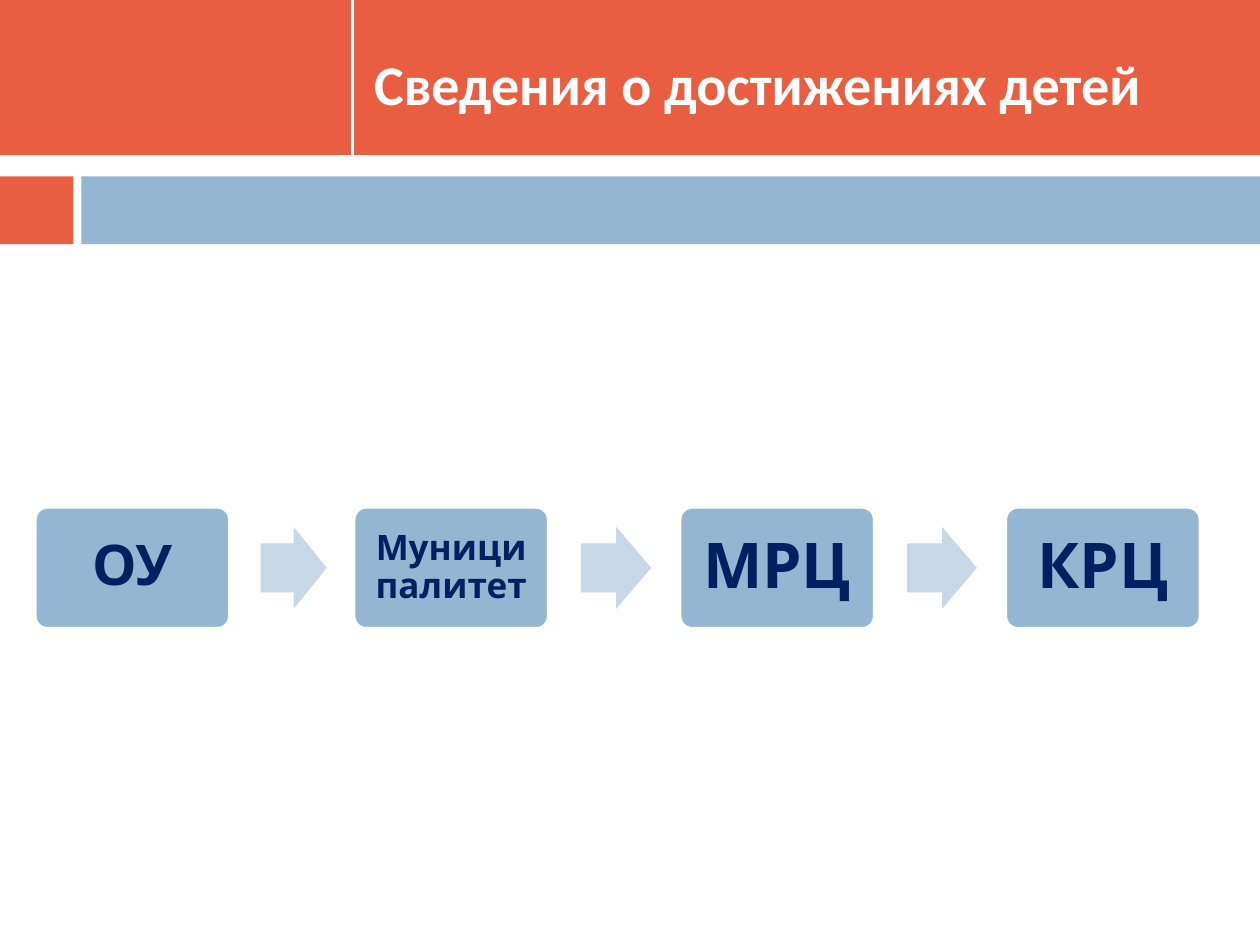
from pptx import Presentation
from pptx.dml.color import RGBColor
from pptx.enum import shapes, text
from pptx.oxml import parse_xml
from pptx.oxml.ns import nsdecls
from pptx.util import Pt

ORANGE = RGBColor(0xE9, 0x5E, 0x40)
BLUE = RGBColor(0x94, 0xB6, 0xD2)
PALE = RGBColor(0xC8, 0xD7, 0xE5)
NAVY = RGBColor(0x00, 0x20, 0x60)
WHITE = RGBColor(0xFF, 0xFF, 0xFF)

TITLE = "Сведения о достижениях детей"
BANDS = [
    (0, 0, 720, 88.6, ORANGE),
    (0, 97.2, 720, 25.2, WHITE),
    (0, 100.8, 42, 38.7, ORANGE),
    (46.5, 100.8, 673.5, 38.7, BLUE),
]
STEPS = [("ОУ", 20.2, 32), ("Муниципалитет", 202.4, 20),
         ("МРЦ", 388.7, 36), ("КРЦ", 574.8, 36)]
STEP_WIDTH, STEP_HEIGHT, ARROW_HEIGHT = 110.9, 69.1, 46.8
MIDDLE = 324.5
ARROW_OFFSET, ARROW_SHARE = 0.25, 0.53


def add_block(slide, kind, left, top, width, height, fill):
    block = slide.shapes.add_shape(kind, Pt(left), Pt(top), Pt(width), Pt(height))
    block.shadow.inherit = False
    block.fill.solid()
    block.fill.fore_color.rgb = fill
    block.line.fill.background()
    return block


def style(paragraph, font_name, size, color):
    for span in paragraph.runs:
        span.font.name = font_name
        span.font.size = Pt(size)
        span.font.bold = True
        span.font.color.rgb = color


def add_header(slide):
    for band in BANDS:
        add_block(slide, shapes.MSO_SHAPE.RECTANGLE, *band)
    divider = slide.shapes.add_connector(
        shapes.MSO_CONNECTOR.STRAIGHT, Pt(201.4), Pt(0), Pt(201.4), Pt(88.6))
    divider.line.color.rgb = WHITE
    divider.line.width = Pt(1.5)
    divider._element.spPr.append(parse_xml(f"<a:effectLst {nsdecls('a')}/>"))

    title = slide.shapes.title
    title.left, title.top, title.width, title.height = Pt(206.6), Pt(18), Pt(516.2), Pt(59)
    frame = title.text_frame
    frame.text = TITLE
    frame.vertical_anchor = text.MSO_ANCHOR.MIDDLE
    frame.paragraphs[0].alignment = text.PP_ALIGN.LEFT
    style(frame.paragraphs[0], "Calibri", 32, WHITE)
    slide.shapes._spTree.append(title._element)


def add_step(slide, label, left, size):
    box = add_block(slide, shapes.MSO_SHAPE.ROUNDED_RECTANGLE, left,
                    MIDDLE - STEP_HEIGHT / 2, STEP_WIDTH, STEP_HEIGHT, BLUE)
    box.adjustments[0] = 0.1
    box.line.color.rgb = WHITE
    box.line.width = Pt(1.5)
    frame = box.text_frame
    frame.text = label
    frame.word_wrap = True
    frame.vertical_anchor = text.MSO_ANCHOR.MIDDLE
    frame.margin_left = frame.margin_right = Pt(6)
    frame.margin_top = frame.margin_bottom = Pt(6)
    para = frame.paragraphs[0]
    para.alignment = text.PP_ALIGN.CENTER
    para.line_spacing = 0.9
    style(para, "Cabin", size, NAVY)


def add_arrow(slide, left, next_left):
    gap = next_left - left - STEP_WIDTH
    arrow = add_block(slide, shapes.MSO_SHAPE.RIGHT_ARROW,
                      left + STEP_WIDTH + gap * ARROW_OFFSET,
                      MIDDLE - ARROW_HEIGHT / 2, gap * ARROW_SHARE, ARROW_HEIGHT, PALE)
    arrow.adjustments[0] = 0.6
    arrow.adjustments[1] = 0.5


def main():
    deck = Presentation()
    deck.slide_width, deck.slide_height = Pt(720), Pt(540)
    slide = deck.slides.add_slide(deck.slide_layouts[5])
    add_header(slide)
    for step in STEPS:
        add_step(slide, *step)
    for (_, left, _), (_, next_left, _) in zip(STEPS, STEPS[1:]):
        add_arrow(slide, left, next_left)
    deck.save("out.pptx")


if __name__ == "__main__":
    main()
